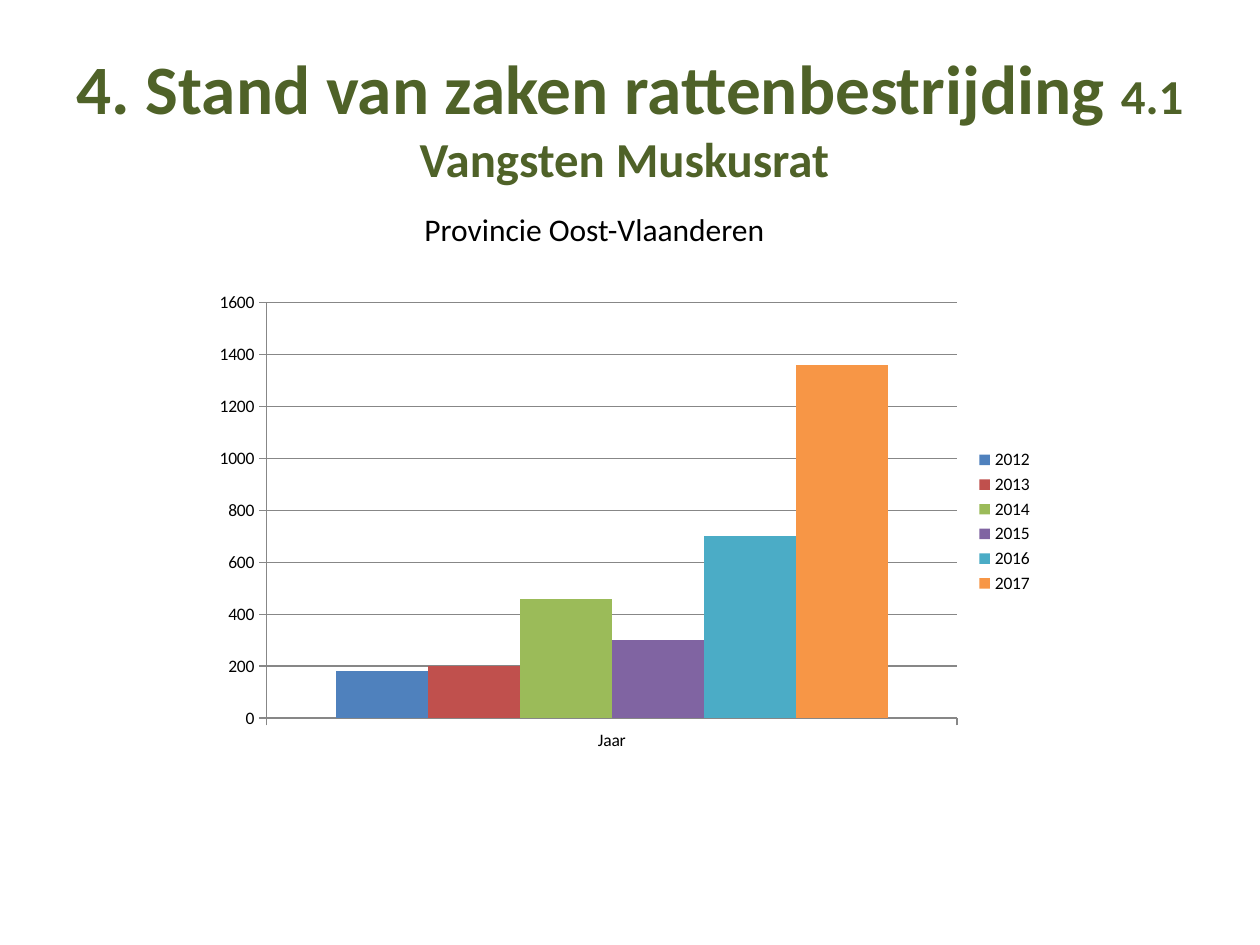
from dataclasses import dataclass

from pptx import Presentation
from pptx.chart.data import CategoryChartData
from pptx.dml.color import RGBColor
from pptx.enum.chart import XL_CHART_TYPE as ChartType, XL_LEGEND_POSITION as LegendPos, XL_TICK_MARK as Tick
from pptx.enum.text import MSO_ANCHOR as Anchor, PP_ALIGN as Align
from pptx.util import Pt


@dataclass(frozen=True)
class Theme:
    font: str = "Calibri"
    heading: str = "4F6228"
    text: str = "000000"
    lines: str = "878787"
    heading_size: float = 39.6
    subheading_size: float = 27.9
    caption_size: float = 18
    chart_size: float = 10
    line_width: float = 0.75


THEME = Theme()
HEADING = "4. Stand van zaken rattenbestrijding "
SUBHEADING = "4.1 Vangsten Muskusrat "
CAPTION = "Provincie Oost-Vlaanderen"
CATEGORY = "Jaar"
CATCHES = [
    ("2012", 180, "4F81BD"),
    ("2013", 200, "C0504D"),
    ("2014", 460, "9BBB59"),
    ("2015", 300, "8064A2"),
    ("2016", 700, "4BACC6"),
    ("2017", 1360, "F79646"),
]
TITLE_AREA = (36, 21.6, 648, 90)
CAPTION_AREA = (235.44, 116.64, 226.8, 28.8)
CHART_AREA = (115.92, 162, 481.68, 272.16)


def points(area):
    return [Pt(length) for length in area]


def style(font, color, size=None, bold=None):
    font.name = THEME.font
    font.color.rgb = RGBColor.from_string(color)
    font.bold = bold
    if size:
        font.size = Pt(size)


def add_title(slide):
    frame = slide.shapes.add_textbox(*points(TITLE_AREA)).text_frame
    frame.word_wrap = True
    frame.vertical_anchor = Anchor.MIDDLE
    title = frame.paragraphs[0]
    title.alignment = Align.CENTER
    style(title.font, THEME.heading, bold=True)
    for text, size in ((HEADING, THEME.heading_size), (SUBHEADING, THEME.subheading_size)):
        part = title.add_run()
        part.text = text
        part.font.size = Pt(size)


def add_caption(slide):
    frame = slide.shapes.add_textbox(*points(CAPTION_AREA)).text_frame
    frame.word_wrap = True
    caption = frame.paragraphs[0]
    caption.text = CAPTION
    style(caption.font, THEME.text, THEME.caption_size)


def draw_line(line):
    line.color.rgb = RGBColor.from_string(THEME.lines)
    line.width = Pt(THEME.line_width)


def add_catches(slide):
    data = CategoryChartData()
    data.categories = [CATEGORY]
    for year, catch, _ in CATCHES:
        data.add_series(year, [catch])
    chart = slide.shapes.add_chart(ChartType.COLUMN_CLUSTERED, *points(CHART_AREA), data).chart
    style(chart.font, THEME.text, THEME.chart_size)
    chart.has_title = False
    chart.has_legend = True
    chart.legend.position = LegendPos.RIGHT
    chart.legend.include_in_layout = False

    bars = chart.plots[0]
    bars.gap_width = 150
    bars.overlap = 0
    bars.vary_by_categories = False
    for series, (_, _, color) in zip(bars.series, CATCHES):
        series.format.fill.solid()
        series.format.fill.fore_color.rgb = RGBColor.from_string(color)

    for axis in (chart.category_axis, chart.value_axis):
        axis.major_tick_mark = Tick.OUTSIDE
        axis.minor_tick_mark = Tick.NONE
        draw_line(axis.format.line)
    scale = chart.value_axis
    scale.minimum_scale, scale.maximum_scale, scale.major_unit = 0, 1600, 200
    scale.has_major_gridlines = True
    draw_line(scale.major_gridlines.format.line)


def main():
    deck = Presentation()
    deck.slide_width, deck.slide_height = Pt(720), Pt(540)
    slide = deck.slides.add_slide(deck.slide_layouts[6])
    add_title(slide)
    add_caption(slide)
    add_catches(slide)
    deck.save("out.pptx")


if __name__ == "__main__":
    main()
